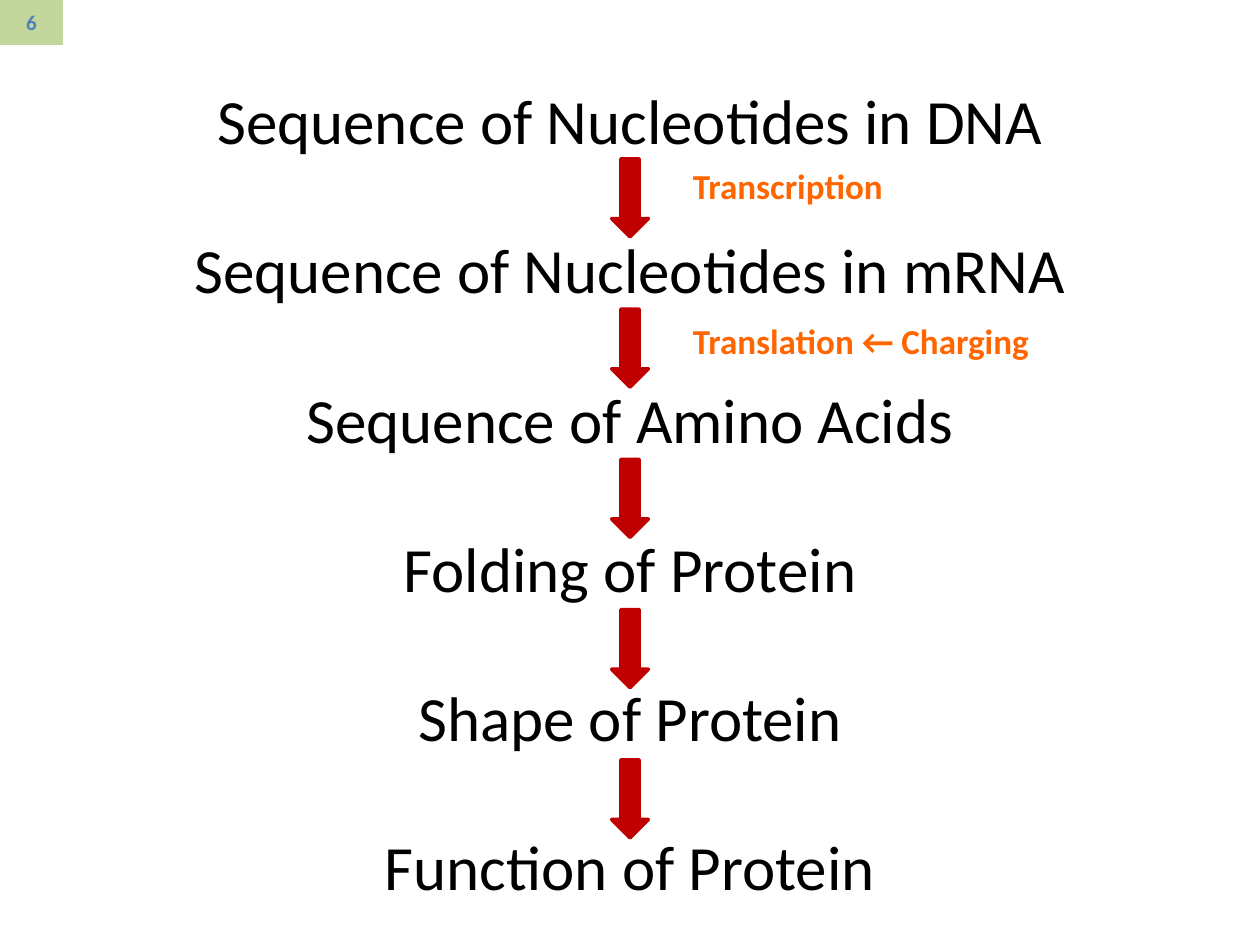
from pptx import Presentation
from pptx.dml.color import RGBColor
from pptx.enum.shapes import MSO_SHAPE
from pptx.enum.text import MSO_ANCHOR, MSO_AUTO_SIZE, PP_ALIGN
from pptx.util import Pt

RECTANGLE = MSO_SHAPE.RECTANGLE
DOWN_ARROW = MSO_SHAPE.DOWN_ARROW
MIDDLE = MSO_ANCHOR.MIDDLE
FIT_SHAPE = MSO_AUTO_SIZE.SHAPE_TO_FIT_TEXT
LEFT = PP_ALIGN.LEFT
CENTER = PP_ALIGN.CENTER

BLACK = RGBColor(0x00, 0x00, 0x00)
RED = RGBColor(0xC0, 0x00, 0x00)
ORANGE = RGBColor(0xFF, 0x66, 0x00)
GREEN = RGBColor(0xC3, 0xD6, 0x9B)
BLUE = RGBColor(0x4F, 0x81, 0xBD)

SLIDE_WIDTH = 720
ARROW_WIDTH = 21
ARROW_HEIGHT = 44.6
ARROW_TOP = 90.8
ARROW_PITCH = 85.85

STEPS = [
    "Sequence of Nucleotides in DNA",
    "Sequence of Nucleotides in mRNA",
    "Sequence of Amino Acids",
    "Folding of Protein",
    "Shape of Protein",
    "Function of Protein",
]
PROCESSES = [
    ("Transcription", 90.7, 126),
    ("Translation ← Charging", 179.3, 251.3),
]


def style_paragraph(paragraph, text, size, color, bold, alignment):
    paragraph.text = text
    paragraph.alignment = alignment
    paragraph.font.name = "Calibri"
    paragraph.font.size = Pt(size)
    paragraph.font.bold = bold
    paragraph.font.color.rgb = color


def add_text_frame(slide, left, top, width, height):
    text_box = slide.shapes.add_textbox(Pt(left), Pt(top), Pt(width), Pt(height))
    text_frame = text_box.text_frame
    text_frame.word_wrap = True
    text_frame.auto_size = FIT_SHAPE
    return text_frame


presentation = Presentation()
presentation.slide_width = Pt(SLIDE_WIDTH)
presentation.slide_height = Pt(540)
slide = presentation.slides.add_slide(presentation.slide_layouts[6])

page_number = slide.shapes.add_shape(RECTANGLE, Pt(0), Pt(0), Pt(36), Pt(25.7))
page_number.shadow.inherit = False
page_number.fill.solid()
page_number.fill.fore_color.rgb = GREEN
page_number.line.fill.background()
page_number.text_frame.vertical_anchor = MIDDLE
style_paragraph(page_number.text_frame.paragraphs[0], "6", 12, BLUE, True, CENTER)

steps_frame = add_text_frame(slide, 80, 43.2, 560, 481)
for index, step in enumerate(STEPS):
    paragraph = steps_frame.add_paragraph() if index else steps_frame.paragraphs[0]
    style_paragraph(paragraph, step, 36, BLACK, False, CENTER)
    paragraph.space_after = Pt(42)

for index in range(len(STEPS) - 1):
    arrow = slide.shapes.add_shape(
        DOWN_ARROW,
        Pt((SLIDE_WIDTH - ARROW_WIDTH) / 2),
        Pt(ARROW_TOP + index * ARROW_PITCH),
        Pt(ARROW_WIDTH),
        Pt(ARROW_HEIGHT),
    )
    arrow.shadow.inherit = False
    arrow.fill.solid()
    arrow.fill.fore_color.rgb = RED
    arrow.line.color.rgb = RED
    arrow.line.width = Pt(2)

for process, top, width in PROCESSES:
    process_frame = add_text_frame(slide, 388.8, top, width, 31.5)
    style_paragraph(process_frame.paragraphs[0], process, 20, ORANGE, True, LEFT)

presentation.save("out.pptx")
